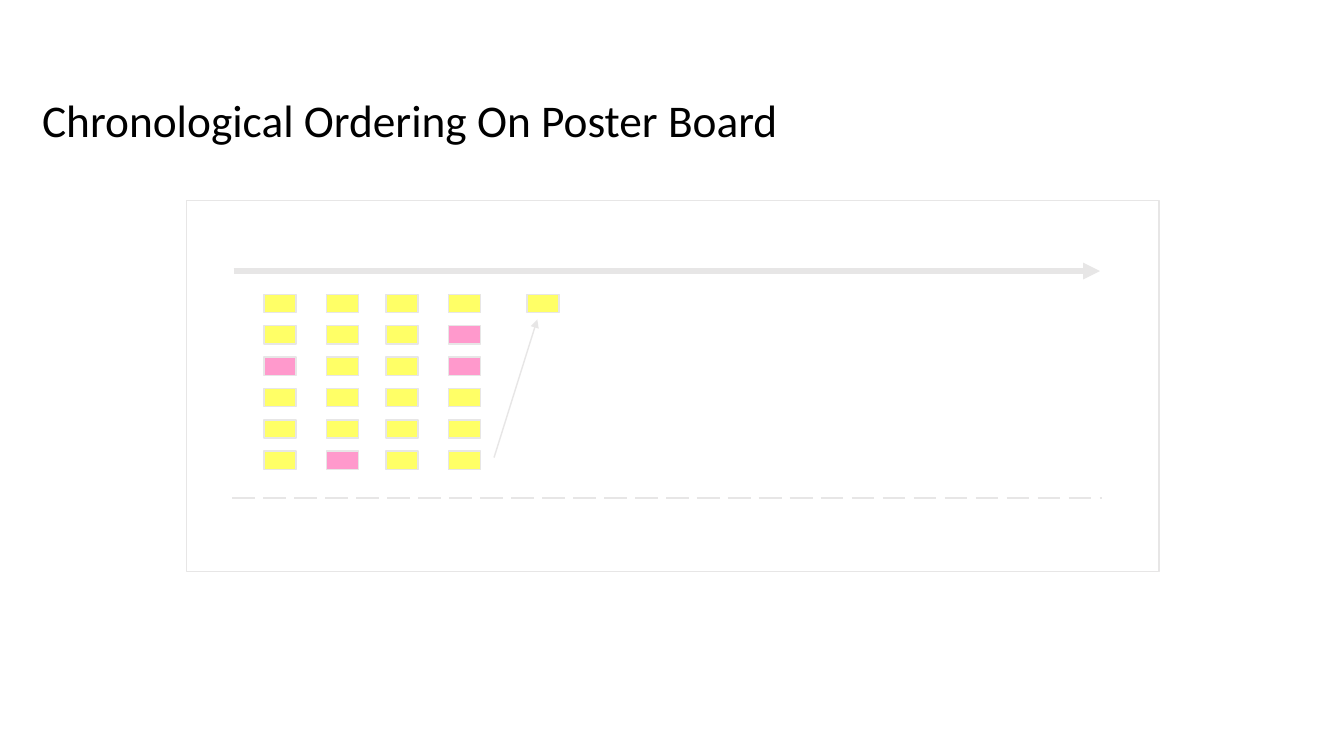
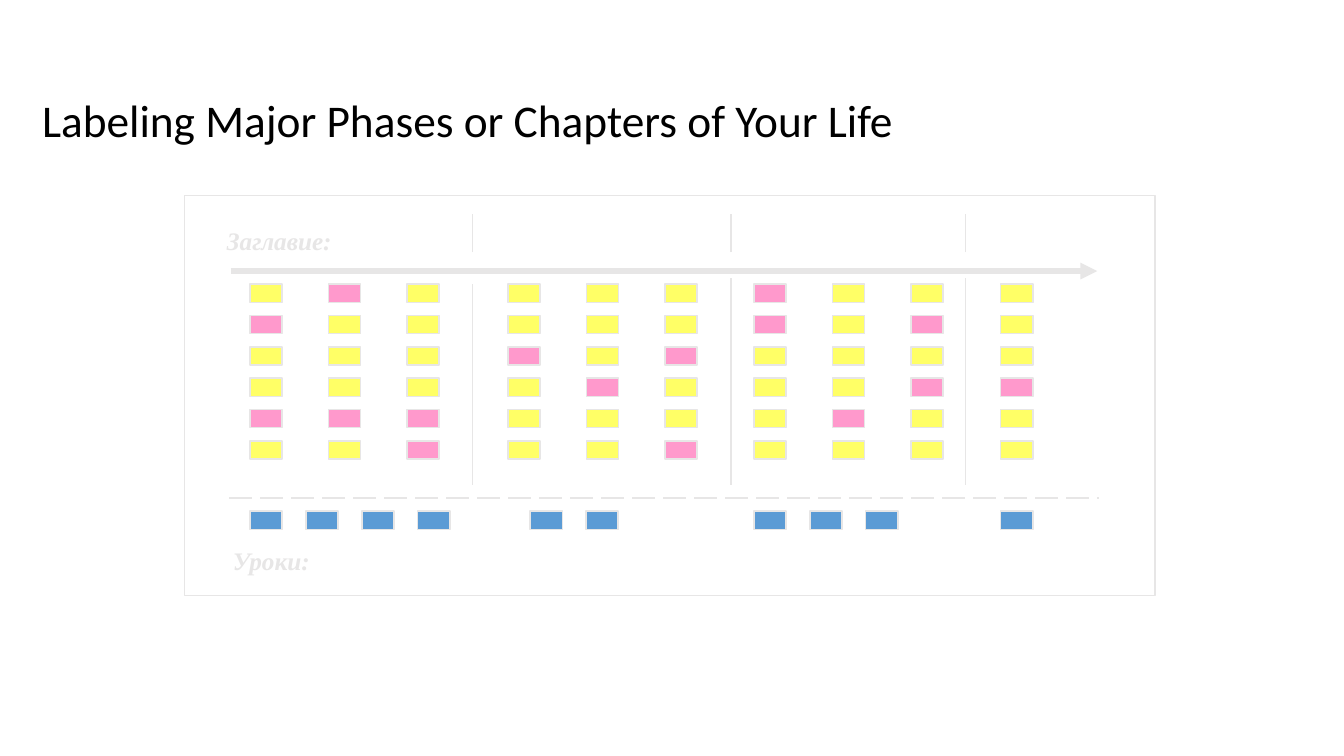
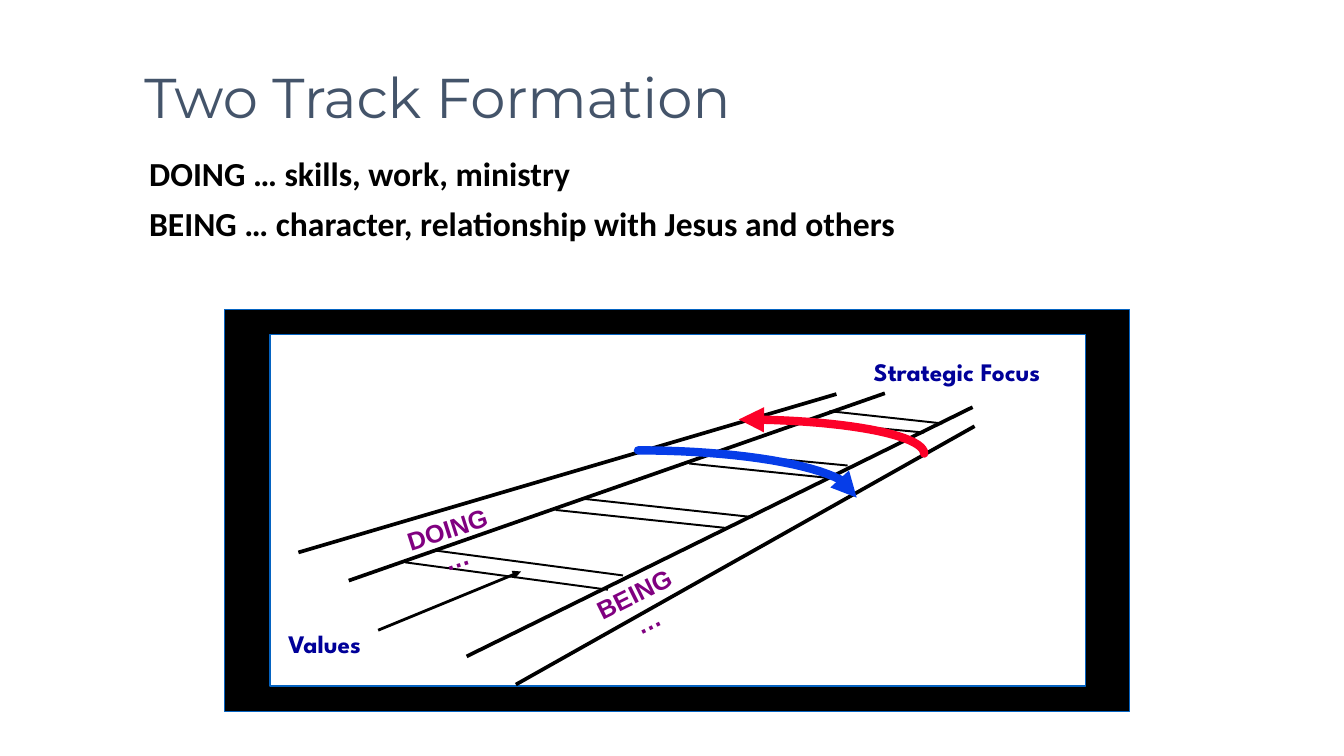
"""Builds three slides on life timelines and two track formation."""
from math import cos, pi, sin

from lxml import etree
from pptx import Presentation
from pptx.dml.color import RGBColor
from pptx.enum.dml import MSO_LINE
from pptx.enum.shapes import MSO_CONNECTOR, MSO_SHAPE
from pptx.enum.text import MSO_ANCHOR, PP_ALIGN
from pptx.oxml.ns import qn
from pptx.util import Cm, Pt

RECTANGLE = MSO_SHAPE.RECTANGLE
STRAIGHT = MSO_CONNECTOR.STRAIGHT
LONG_DASH = MSO_LINE.LONG_DASH
LEFT, CENTER = PP_ALIGN.LEFT, PP_ALIGN.CENTER
TOP, MIDDLE, BOTTOM = MSO_ANCHOR.TOP, MSO_ANCHOR.MIDDLE, MSO_ANCHOR.BOTTOM

COLORS = {
    "white": "FFFFFF",
    "black": "000000",
    "grey": "E7E6E6",
    "yellow": "FFFF66",
    "pink": "FF99CC",
    "lesson": "5B9BD5",
    "heading": "44546A",
    "frame": "0563C1",
    "track": "800080",
    "label": "000099",
    "blue": "063DE8",
    "red": "FC0128",
}
NOTE_COLORS = {"Y": "yellow", "P": "pink"}
NOTE_WIDTH, NOTE_HEIGHT, NOTE_PITCH = 0.81, 0.46, 0.79
COLUMN_PITCH, LESSON_PITCH = 1.98, 1.41
TIMELINE_Y, DASHES_Y, TIMELINE_LENGTH = 6.83, 12.55, 21.83
CURVE_STEPS = 24

POSTER_COLUMNS = [
    (6.65, "YYPYYY"),
    (8.23, "YYYYYP"),
    (9.73, "YYYYYY"),
    (11.3, "YPPYYY"),
    (13.28, "Y"),
]
CHAPTERS = [
    (6.3, ["YPYYPY", "PYYYPY", "YYYYPP"]),
    (12.8, ["YYPYYY", "YYYPYY", "YYPYYP"]),
    (19, ["PPYYYY", "YYYYPY", "YPYPYY"]),
    (25.22, ["YYYPYY"]),
]
LESSONS = [(6.3, 4), (13.36, 2), (19, 3), (25.22, 1)]
DIVIDERS = [(11.91, 7.16), (18.42, 7.01), (24.33, 7.01)]
RAILS = [
    (8.79, 14.63, 22.3, 9.91),
    (7.52, 13.92, 21.08, 9.93),
    (11.76, 16.54, 24.51, 10.26),
    (13, 17.25, 24.56, 10.74),
]
TIES = [
    (10.21, 14.17, 15.32, 14.86),
    (10.95, 13.87, 15.7, 14.5),
    (14, 12.85, 18.36, 13.31),
    (14.71, 12.57, 18.97, 13.03),
    (17.37, 11.68, 20.85, 12.04),
    (17.88, 11.4, 21.36, 11.73),
    (20.32, 10.62, 23.29, 10.9),
    (20.9, 10.36, 23.75, 10.67),
]


def rgb(color):
    """Return the named colour."""
    return RGBColor.from_string(COLORS[color])


def style_line(line, color, width):
    """Set the colour and the width of a line."""
    line.color.rgb = rgb(color)
    line.width = Pt(width)


def add_arrowhead(shape, end):
    """Put a triangle on the headEnd or tailEnd of a line."""
    outline = shape._element.spPr.find(qn("a:ln"))
    etree.SubElement(outline, qn(f"a:{end}"), type="triangle")


def add_box(slide, left, top, width, height, fill, outline="grey"):
    """Add a filled rectangle with a thin outline."""
    box = slide.shapes.add_shape(RECTANGLE, Cm(left), Cm(top), Cm(width), Cm(height))
    box.shadow.inherit = False
    box.fill.solid()
    box.fill.fore_color.rgb = rgb(fill)
    style_line(box.line, outline, 1)


def add_line(slide, x1, y1, x2, y2, color="grey", width=1, dash=None, arrow=False):
    """Add a straight line, dashed or with an arrowhead on request."""
    connector = slide.shapes.add_connector(STRAIGHT, Cm(x1), Cm(y1), Cm(x2), Cm(y2))
    style_line(connector.line, color, width)
    if dash:
        connector.line.dash_style = dash
    if arrow:
        add_arrowhead(connector, "tailEnd")
    etree.SubElement(connector._element.spPr, qn("a:effectLst"))


def add_curve(slide, left, top, width, height, color, end):
    """Add a quarter ellipse from top left to bottom right with an arrowhead."""
    angles = [pi / 2 * step / CURVE_STEPS for step in range(CURVE_STEPS + 1)]
    points = [
        (Cm(left + width * sin(angle)), Cm(top + height * (1 - cos(angle))))
        for angle in angles
    ]
    builder = slide.shapes.build_freeform(*points[0])
    builder.add_line_segments(points[1:], close=False)
    curve = builder.convert_to_shape()
    curve.shadow.inherit = False
    curve.fill.background()
    style_line(curve.line, color, 6)
    curve._element.spPr.find(qn("a:ln")).set("cap", "rnd")
    add_arrowhead(curve, end)


def add_text(slide, text, left, top, width, height, size=18, font="Calibri",
             color="black", bold=False, italic=False, align=LEFT, anchor=TOP,
             inset=True, rotation=0, line_spacing=None, space_before=None):
    """Add a text box with one paragraph for each line of text."""
    box = slide.shapes.add_textbox(Cm(left), Cm(top), Cm(width), Cm(height))
    box.rotation = rotation
    frame = box.text_frame
    frame.word_wrap = True
    frame.vertical_anchor = anchor
    if not inset:
        frame.margin_left = frame.margin_right = Cm(0)
        frame.margin_top = frame.margin_bottom = Cm(0)
    frame.text = text
    for paragraph in frame.paragraphs:
        paragraph.alignment = align
        paragraph.line_spacing = line_spacing
        if space_before:
            paragraph.space_before = Pt(space_before)
        paragraph.font.size = Pt(size)
        paragraph.font.name = font
        paragraph.font.bold = bold
        paragraph.font.italic = italic
        paragraph.font.color.rgb = rgb(color)


def add_title(slide, text):
    """Add the title of a timeline slide."""
    add_text(slide, text, 0.81, 0.79, 32, 3.02, size=32.4, anchor=BOTTOM)


def add_board(slide, left, top, width, height, start):
    """Add a poster board with its time arrow and dashed base line."""
    add_box(slide, left, top, width, height, "white")
    end = start + TIMELINE_LENGTH
    add_line(slide, start, TIMELINE_Y, end, TIMELINE_Y, width=4, arrow=True)
    add_line(slide, start - 0.04, DASHES_Y, end + 0.04, DASHES_Y, width=2, dash=LONG_DASH)


def add_note(slide, left, top, color):
    """Add one sticky note."""
    add_box(slide, left, top, NOTE_WIDTH, NOTE_HEIGHT, color)


def add_note_column(slide, left, top, notes):
    """Add a column of sticky notes, one for each letter."""
    for row, note in enumerate(notes):
        add_note(slide, left, top + row * NOTE_PITCH, NOTE_COLORS[note])


def build_ordering(slide):
    """Build the slide on chronological ordering."""
    add_board(slide, 4.7, 5.05, 24.51, 9.35, start=5.89)
    for left, notes in POSTER_COLUMNS:
        add_note_column(slide, left, 7.42, notes)
    add_line(slide, 12.45, 11.53, 13.54, 8.05, arrow=True)
    add_title(slide, "Chronological Ordering On Poster Board")


def build_chapters(slide):
    """Build the slide on the chapters of a life."""
    add_board(slide, 4.65, 4.93, 24.46, 10.08, start=5.82)
    for start, columns in CHAPTERS:
        for index, notes in enumerate(columns):
            add_note_column(slide, start + index * COLUMN_PITCH, 7.16, notes)
    for start, count in LESSONS:
        for index in range(count):
            add_note(slide, start + index * LESSON_PITCH, 12.88, "lesson")
    for x, top in DIVIDERS:
        add_line(slide, x, top, x, 12.22)
        add_line(slide, x, 6.35, x, 5.38)
    for label, left, top in [("Заглавие:", 5.72, 5.69), ("Уроки:", 5.87, 13.74)]:
        add_text(slide, label, left, top, 4, 0.8, font="Times New Roman", color="grey",
                 bold=True, italic=True, inset=False)
    add_title(slide, "Labeling Major Phases or Chapters of Your Life")


def build_tracks(slide):
    """Build the slide on two track formation."""
    add_text(slide, "Two Track Formation", 0.23, 0.84, 21.59, 3.18, size=40,
             font="Montserrat", color="heading", align=CENTER, anchor=MIDDLE)
    add_text(slide, "DOING … skills, work, ministry\n"
             "BEING … character, relationship with Jesus and others",
             3.51, 3.84, 23.14, 3.56, size=24, bold=True, line_spacing=0.9,
             space_before=10)
    add_box(slide, 5.66, 7.8, 22.81, 10.13, "black", outline="frame")
    add_box(slide, 6.81, 8.43, 20.55, 8.86, "white", outline="frame")
    for rail in RAILS:
        add_line(slide, *rail, color="black", width=2.63)
    for tie in TIES:
        add_line(slide, *tie, color="black", width=1.38)
    for track, left, top, width, rotation in [
        ("DOING…", 9.96, 12.95, 2.62, 342.3),
        ("BEING…", 14.73, 14.58, 2.49, 333.6),
    ]:
        add_text(slide, track, left, top, width, 0.76, font="Arial", color="track",
                 bold=True, align=CENTER, inset=False, rotation=rotation)
    add_curve(slide, 16.08, 11.35, 5.51, 1.19, "blue", "tailEnd")
    add_curve(slide, 18.62, 10.57, 4.67, 0.86, "red", "headEnd")
    add_line(slide, 9.53, 15.88, 13.13, 14.4, color="black", width=2, arrow=True)
    for label, left, top, width in [
        ("Values", 7.01, 15.7, 2.62),
        ("Strategic Focus", 21.77, 8.86, 5.21),
    ]:
        add_text(slide, label, left, top, width, 1.02, font="League Spartan",
                 color="label", bold=True)


def main():
    """Build and save the presentation."""
    deck = Presentation()
    deck.slide_width, deck.slide_height = Cm(33.87), Cm(19.05)
    blank = deck.slide_layouts[6]
    for build in (build_ordering, build_chapters, build_tracks):
        build(deck.slides.add_slide(blank))
    deck.save("out.pptx")


if __name__ == "__main__":
    main()
